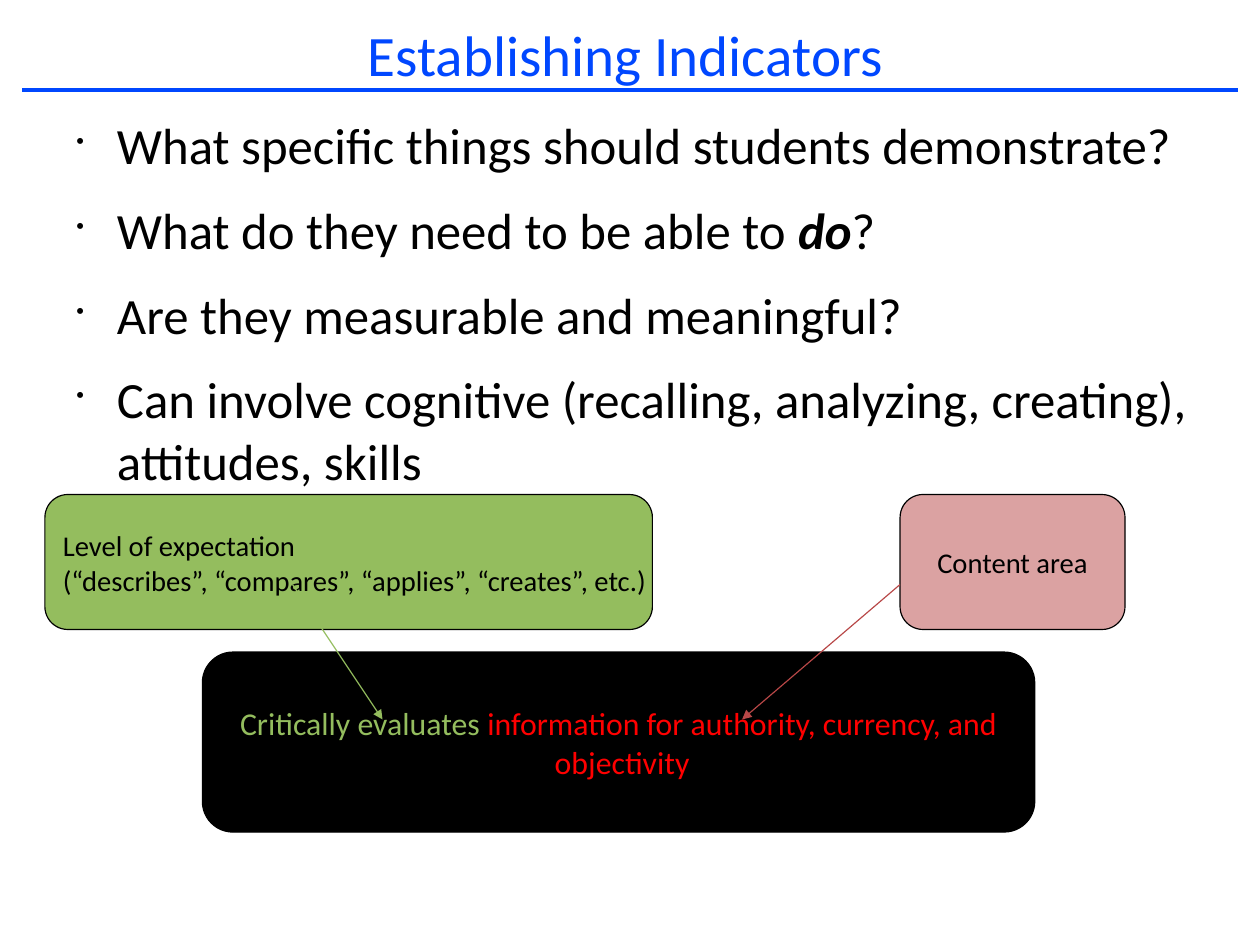
from lxml import etree
from pptx import Presentation
from pptx.dml.color import RGBColor
from pptx.enum import shapes, text
from pptx.oxml import ns
from pptx.util import Pt

BLUE = RGBColor(0x00, 0x47, 0xFF)
BLACK = RGBColor(0x00, 0x00, 0x00)
GREEN = RGBColor(0x94, 0xBD, 0x5E)
BRICK = RGBColor(0xB8, 0x47, 0x47)
RED = RGBColor(0xFF, 0x00, 0x00)

FONT = "Calibri"
LEFT, CENTER = text.PP_ALIGN.LEFT, text.PP_ALIGN.CENTER

QUESTIONS = [
    [("What specific things should students demonstrate?", False)],
    [("What do they need to be able to ", False), ("do", True), ("?", False)],
    [("Are they measurable and meaningful?", False)],
    [("Can involve cognitive (recalling, analyzing, creating), attitudes, skills", False)],
]


def add_xml(parent, tag, **attrs):
    return etree.SubElement(parent, ns.qn(tag), attrs)


def add_run(p, words, size, color):
    r = p.add_run()
    r.text = words
    r.font.name = FONT
    r.font.size = Pt(size)
    r.font.color.rgb = color
    return r


def add_paragraph(tf, index, align):
    p = tf.add_paragraph() if index else tf.paragraphs[0]
    p.alignment = align
    p.line_spacing = 1.02
    return p


def add_textbox(s, x, y, w, h, anchor):
    tf = s.shapes.add_textbox(Pt(x), Pt(y), Pt(w), Pt(h)).text_frame
    tf.word_wrap = True
    tf.vertical_anchor = anchor
    tf.margin_left = tf.margin_right = tf.margin_top = tf.margin_bottom = 0
    return tf


def add_line(s, x1, y1, x2, y2, color, width, arrow=False):
    line = s.shapes.add_connector(
        shapes.MSO_CONNECTOR.STRAIGHT, Pt(x1), Pt(y1), Pt(x2), Pt(y2))
    line.line.color.rgb = color
    line.line.width = Pt(width)
    spPr = line._element.spPr
    if arrow:
        add_xml(spPr.find(ns.qn("a:ln")), "a:tailEnd", type="triangle")
    add_xml(spPr, "a:effectLst")


def add_card(s, x, y, w, h, fill, size, align, lines, opacity=None):
    sp = s.shapes.add_shape(
        shapes.MSO_SHAPE.ROUNDED_RECTANGLE, Pt(x), Pt(y), Pt(w), Pt(h))
    sp.shadow.inherit = False
    sp.adjustments[0] = 0.17
    sp.fill.solid()
    sp.fill.fore_color.rgb = fill
    if opacity:
        color = sp._element.spPr.find(".//" + ns.qn("a:srgbClr"))
        add_xml(color, "a:alpha", val=str(opacity * 1000))
    sp.line.color.rgb = BLACK
    sp.line.width = Pt(0.75)
    tf = sp.text_frame
    tf.word_wrap = False
    tf.vertical_anchor = text.MSO_ANCHOR.MIDDLE
    for i, line in enumerate(lines):
        p = add_paragraph(tf, i, align)
        for words, color in line:
            add_run(p, words, size, color)


def heading(s, x, y, w, h):
    add_line(s, x, y + h, x + w, y + h, BLUE, 2.83)
    tf = add_textbox(s, x + 22.6, y, 714.2, h - 1, text.MSO_ANCHOR.MIDDLE)
    add_run(add_paragraph(tf, 0, CENTER), "Establishing Indicators", 36, BLUE)


def questions(s, x, y, w, h):
    tf = add_textbox(s, x, y, w, h, text.MSO_ANCHOR.TOP)
    for i, pieces in enumerate(QUESTIONS):
        p = add_paragraph(tf, i, LEFT)
        p.space_after = Pt(14.2)
        pPr = p._p.get_or_add_pPr()
        pPr.set("marL", str(Pt(34)))
        pPr.set("indent", str(Pt(-25.5)))
        add_xml(add_xml(pPr, "a:buClr"), "a:srgbClr", val=str(BLACK))
        add_xml(pPr, "a:buSzPct", val="45000")
        add_xml(pPr, "a:buChar", char="•")
        for words, stressed in pieces:
            r = add_run(p, words, 32, BLACK)
            r.font.bold = r.font.italic = stressed


def indicator_example(s, x, y, w, h):
    example_w, example_h = 524.4, 113.4
    example_y = y + h - example_h
    content_x, label_h = x + w - 141.7, 85
    add_card(s, content_x, y, 141.7, label_h, BRICK, 18, CENTER,
             [[("Content area", BLACK)]], opacity=50)
    add_card(s, x, y, 382.7, label_h, GREEN, 18, LEFT,
             [[("Level of expectation", BLACK)],
              [("(“describes”, “compares”, “applies”, “creates”, etc.)", BLACK)]])
    add_card(s, x + 99.2, example_y, example_w, example_h, BLACK, 20, CENTER,
             [[("Critically evaluates ", GREEN),
               ("information for authority, currency, and", RED)],
              [(" objectivity", RED)]])
    start_y, end_y = y + 56.7, example_y + 42.5
    add_line(s, x + 156, start_y, x + 212.7, end_y, GREEN, 0.75, arrow=True)
    add_line(s, content_x, start_y, content_x - 99.5, end_y, BRICK, 0.75, arrow=True)


def main():
    prs = Presentation()
    prs.slide_width, prs.slide_height = Pt(793.75), Pt(595.25)
    s = prs.slides.add_slide(prs.slide_layouts[6])
    heading(s, 14.2, 10.8, 765.4, 46)
    questions(s, 39.7, 70.9, 714.2, 269.3)
    indicator_example(s, 28.3, 311.5, 680.4, 212.6)
    prs.save("out.pptx")


if __name__ == "__main__":
    main()
